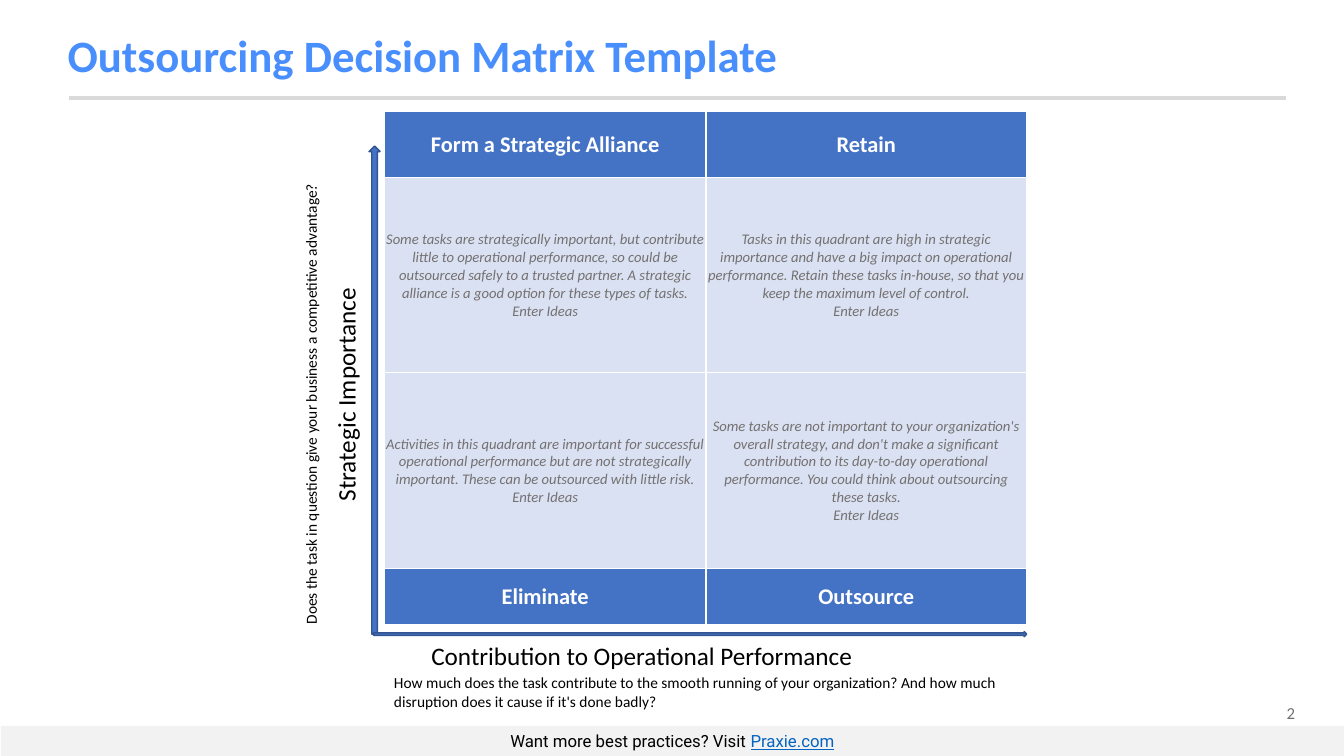
"""Builds the outsourcing decision matrix slide."""
from lxml import etree
from pptx import Presentation
from pptx import util as u
from pptx.dml.color import RGBColor
from pptx.enum import shapes, text
from pptx.oxml import ns

TITLE_BLUE = RGBColor(0x48, 0x8E, 0xFD)
BLUE = RGBColor(0x44, 0x72, 0xC4)
DARK_BLUE = RGBColor(0x32, 0x54, 0x91)
PALE_BLUE = RGBColor(0xD9, 0xE1, 0xF2)
LINK_BLUE = RGBColor(0x05, 0x63, 0xC1)
GREY = RGBColor(0x75, 0x71, 0x71)
RULE_GREY = RGBColor(0xD9, 0xD9, 0xD9)
FOOTER_GREY = RGBColor(0xF2, 0xF2, 0xF2)
BLACK = RGBColor(0, 0, 0)
WHITE = RGBColor(0xFF, 0xFF, 0xFF)

LEFT, CENTER, RIGHT = text.PP_ALIGN.LEFT, text.PP_ALIGN.CENTER, text.PP_ALIGN.RIGHT
IDEAS = "Enter Ideas"
QUADRANTS = [
    ["Form a Strategic Alliance", "Retain"],
    ["Some tasks are strategically important, but contribute little to operational "
     "performance, so could be outsourced safely to a trusted partner. A strategic "
     "alliance is a good option for these types of tasks.",
     "Tasks in this quadrant are high in strategic importance and have a big impact on "
     "operational performance. Retain these tasks in-house, so that you keep the "
     "maximum level of control."],
    ["Activities in this quadrant are important for successful operational performance "
     "but are not strategically important. These can be outsourced with little risk.",
     "Some tasks are not important to your organization's overall strategy, and don't "
     "make a significant contribution to its day-to-day operational performance. You "
     "could think about outsourcing these tasks."],
    ["Eliminate", "Outsource"],
]
COLUMN_WIDTHS = [8.1, 8.08]
ROW_HEIGHTS = [1.68, 4.9, 4.95, 1.4]


def cm(*lengths):
    return [u.Cm(length) for length in lengths]


class MatrixSlide:
    """Holds the font and the current slide, and adds each kind of element."""

    def __init__(self, deck, font="Calibri"):
        self.font = font
        self.slide = deck.slides.add_slide(deck.slide_layouts[5])

    def run(self, paragraph, words, size, color, font=None, **emphasis):
        run = paragraph.add_run()
        run.text = words
        run.font.name = font or self.font
        run.font.size = u.Pt(size)
        run.font.color.rgb = color
        for name, value in emphasis.items():
            setattr(run.font, name, value)

    def title(self, words, *place):
        title = self.slide.shapes.title
        title.left, title.top, title.width, title.height = cm(*place)
        frame = title.text_frame
        frame.auto_size = text.MSO_AUTO_SIZE.NONE
        frame.vertical_anchor = text.MSO_ANCHOR.MIDDLE
        heading = frame.paragraphs[0]
        heading.alignment = LEFT
        heading.line_spacing = 0.9
        self.run(heading, words, 32, TITLE_BLUE, bold=True)

    def rule(self, *ends):
        rule = self.slide.shapes.add_connector(shapes.MSO_CONNECTOR.STRAIGHT, *cm(*ends))
        rule.line.color.rgb = RULE_GREY
        rule.line.width = u.Pt(3)
        etree.SubElement(rule._element.spPr, ns.qn("a:effectLst"))

    def label(self, words, size, *place, color=BLACK, align=LEFT, rotation=0, wrap=True):
        label = self.slide.shapes.add_textbox(*cm(*place))
        label.rotation = rotation
        label.text_frame.word_wrap = wrap
        paragraph = label.text_frame.paragraphs[0]
        paragraph.alignment = align
        self.run(paragraph, words, size, color)

    def block(self, kind, fill, *place):
        block = self.slide.shapes.add_shape(kind, *cm(*place))
        block.shadow.inherit = False
        block.fill.solid()
        block.fill.fore_color.rgb = fill
        block.line.fill.background()
        return block

    def axis(self, *place, rotation=0):
        axis = self.block(shapes.MSO_SHAPE.UP_ARROW, BLUE, *place)
        axis.rotation = rotation
        axis.line.color.rgb = DARK_BLUE
        axis.line.width = u.Pt(1)

    def footer(self, invitation, address, *place):
        footer = self.block(shapes.MSO_SHAPE.RECTANGLE, FOOTER_GREY, *place)
        footer.text_frame.vertical_anchor = text.MSO_ANCHOR.MIDDLE
        paragraph = footer.text_frame.paragraphs[0]
        paragraph.alignment = CENTER
        self.run(paragraph, invitation, 12, BLACK, "Roboto")
        self.run(paragraph, address, 12, LINK_BLUE, "Roboto", underline=True)

    def cell(self, cell, words, is_heading):
        properties = cell._tc.get_or_add_tcPr()
        for side in ("lnL", "lnR", "lnT", "lnB"):
            border = etree.SubElement(properties, ns.qn(f"a:{side}"), w=str(u.Pt(1)))
            paint = etree.SubElement(border, ns.qn("a:solidFill"))
            etree.SubElement(paint, ns.qn("a:srgbClr"), val=str(WHITE))
        cell.fill.solid()
        cell.fill.fore_color.rgb = BLUE if is_heading else PALE_BLUE
        cell.vertical_anchor = text.MSO_ANCHOR.MIDDLE
        cell.margin_left = cell.margin_right = cell.margin_top = u.Cm(0.02)
        cell.margin_bottom = 0
        paragraph = cell.text_frame.paragraphs[0]
        paragraph.alignment = CENTER
        if is_heading:
            self.run(paragraph, words, 16, WHITE, bold=True)
        else:
            self.run(paragraph, words, 10.5, GREY, bold=False, italic=True)
            paragraph.add_line_break()
            self.run(paragraph, IDEAS, 10.5, GREY, bold=False, italic=True)

    def matrix(self, left, top):
        place = cm(left, top, sum(COLUMN_WIDTHS), sum(ROW_HEIGHTS))
        matrix = self.slide.shapes.add_table(len(QUADRANTS), len(COLUMN_WIDTHS), *place).table
        for column, width in zip(matrix.columns, COLUMN_WIDTHS):
            column.width = u.Cm(width)
        for row, height, entries in zip(matrix.rows, ROW_HEIGHTS, QUADRANTS):
            row.height = u.Cm(height)
            for cell, words in zip(row.cells, entries):
                self.cell(cell, words, entries in (QUADRANTS[0], QUADRANTS[-1]))


def main():
    deck = Presentation()
    deck.slide_width, deck.slide_height = cm(33.87, 19.05)
    page = MatrixSlide(deck)
    page.label("2", 12, 30.3, 17.58, 2.59, 0.76, color=GREY, align=RIGHT)
    page.rule(1.73, 2.46, 32.41, 2.46)
    page.title("Outsourcing Decision Matrix Template", 1.45, 0.48, 27.79, 1.96)
    page.footer("Want more best practices? Visit ", "Praxie.com", 0.02, 18.29, 33.85, 0.76)
    page.axis(9.3, 3.68, 0.28, 12.3)
    page.axis(17.58, 7.75, 0.13, 16.46, rotation=90)
    page.matrix(9.69, 2.8)
    page.label("Strategic Importance", 18, 5.74, 9.4, 5.94, 1.02, rotation=270)
    page.label("Contribution to Operational Performance", 18, 10.62, 16, 11.25, 1.02, wrap=False)
    page.label("How much does the task contribute to the smooth running of your organization? "
               "And how much disruption does it cause if it's done badly?",
               11, 9.68, 16.84, 16.56, 1.19)
    page.label("Does the task in question give your business a competitive advantage?",
               11, 1.7, 9.47, 12.29, 0.74, rotation=270)
    deck.save("out.pptx")


if __name__ == "__main__":
    main()
